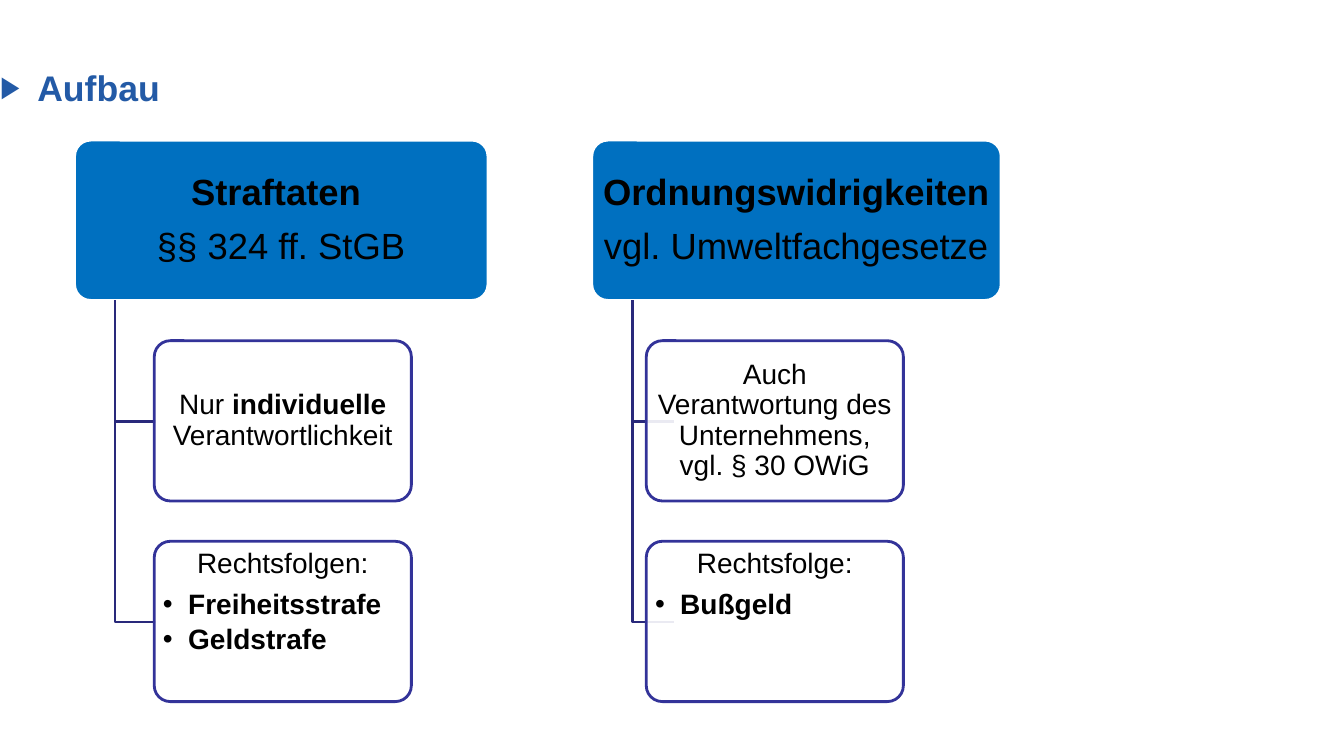
import pptx
import pptx.util
import pptx.dml.color
import pptx.enum.shapes
import pptx.enum.text
import pptx.oxml
import pptx.oxml.ns

PX = 9144
COLORS = {
    "heading": "235AA6",
    "header": "0070C0",
    "branch": "29297B",
    "outline": "333399",
    "paper": "FFFFFF",
    "ink": "000000",
}
CENTER = pptx.enum.text.PP_ALIGN.CENTER
LEFT = pptx.enum.text.PP_ALIGN.LEFT
TOP = pptx.enum.text.MSO_ANCHOR.TOP
MIDDLE = pptx.enum.text.MSO_ANCHOR.MIDDLE

HEADER_TOP = 139
BOX_HEIGHT = 159
BOX_WIDTH = 255
BOX_STEP = 199
BRANCH_INDENT = 40
BRANCH_LENGTH = 41

COLUMNS = [
    {
        "box": (74, 410),
        "item_left": 153,
        "header": [[("Straftaten ", True)], [("§§ 324 ff. StGB", False)]],
        "liability": [[("Nur ", False), ("individuelle", True),
                       (" Verantwortlichkeit", False)]],
        "consequence": "Rechtsfolgen:",
        "penalties": ["Freiheitsstrafe", "Geldstrafe"],
    },
    {
        "box": (587, 406),
        "item_left": 641,
        "header": [[("Ordnungswidrigkeiten", True)],
                   [("vgl. Umweltfachgesetze", False)]],
        "liability": [[("Auch Verantwortung des Unternehmens, vgl. § 30 OWiG",
                        False)]],
        "consequence": "Rechtsfolge:",
        "penalties": ["Bußgeld"],
    },
]


def px(length):
    return pptx.util.Emu(round(length * PX))


def rgb(name):
    return pptx.dml.color.RGBColor.from_string(COLORS[name])


def add_element(parent, tag, **attributes):
    element = pptx.oxml.parse_xml(
        f"<a:{tag} {pptx.oxml.ns.nsdecls('a')}/>")
    for key, value in attributes.items():
        element.set(key, value)
    parent.append(element)
    return element


def add_bullet(paragraph, symbol, indent, color=None, percent=None):
    properties = paragraph._p.get_or_add_pPr()
    properties.set("marL", str(px(indent)))
    properties.set("indent", str(px(-indent)))
    if color:
        add_element(add_element(properties, "buClr"), "srgbClr",
                    val=COLORS[color])
    if percent:
        add_element(properties, "buSzPct", val=str(percent * 1000))
    add_element(properties, "buFont", typeface="Arial")
    add_element(properties, "buChar", char=symbol)


def format_run(run, size, color, bold):
    run.font.name = "Arial"
    run.font.size = pptx.util.Pt(size)
    run.font.bold = bold
    run.font.color.rgb = rgb(color)


def add_paragraph(frame, index, runs, size, gap, align=CENTER, bullet=False):
    paragraph = frame.paragraphs[0] if index == 0 else frame.add_paragraph()
    if bullet:
        add_bullet(paragraph, "•", 25)
    paragraph.alignment = align
    paragraph.line_spacing = 0.9
    paragraph.space_after = pptx.util.Pt(gap)
    for text, bold in runs:
        run = paragraph.add_run()
        run.text = text
        format_run(run, size, "ink", bold)


def add_card(slide, left, top, width, fill, line, anchor, inset):
    card = slide.shapes.add_shape(
        pptx.enum.shapes.MSO_SHAPE.ROUNDED_RECTANGLE,
        px(left), px(top), px(width), px(BOX_HEIGHT))
    card.adjustments[0] = 0.1
    card.shadow.inherit = False
    card.fill.solid()
    card.fill.fore_color.rgb = rgb(fill)
    card.line.color.rgb = rgb(line)
    card.line.width = pptx.util.Pt(2)
    frame = card.text_frame
    frame.word_wrap = True
    frame.vertical_anchor = anchor
    frame.margin_left = frame.margin_right = px(inset)
    frame.margin_top = frame.margin_bottom = px(inset - 1)
    return card


def add_item(slide, left, top, anchor):
    item = add_card(slide, left, top, BOX_WIDTH, "paper", "outline", anchor, 4)
    color = item.fill._xPr.find(".//" + pptx.oxml.ns.qn("a:srgbClr"))
    add_element(color, "alpha", val="90000")
    return item.text_frame


def add_branch(slide, left, top, bottom):
    builder = slide.shapes.build_freeform(px(left), px(top))
    builder.add_line_segments(
        [(px(left), px(bottom)), (px(left + BRANCH_LENGTH), px(bottom))],
        close=False)
    branch = builder.convert_to_shape()
    branch.fill.background()
    branch.line.color.rgb = rgb("branch")
    branch.line.width = pptx.util.Pt(2)
    branch.shadow.inherit = False


def add_heading(slide, left, top, width, height):
    heading = slide.shapes.title
    heading.left, heading.top = px(left), px(top)
    heading.width, heading.height = px(width), px(height)
    frame = heading.text_frame
    frame.text = "Aufbau"
    frame.word_wrap = True
    frame.auto_size = pptx.enum.text.MSO_AUTO_SIZE.NONE
    frame.vertical_anchor = TOP
    frame.margin_left = frame.margin_right = 0
    frame.margin_top = frame.margin_bottom = 0
    paragraph = frame.paragraphs[0]
    add_bullet(paragraph, "▶", 37, "heading", 85)
    paragraph.alignment = LEFT
    paragraph.line_spacing = pptx.util.Pt(29)
    format_run(paragraph.runs[0], 25.4, "heading", True)


def add_column(slide, column):
    left, width = column["box"]
    header = add_card(slide, left, HEADER_TOP, width, "header", "paper",
                      MIDDLE, 5)
    for index, runs in enumerate(column["header"]):
        add_paragraph(header.text_frame, index, runs, 26,
                      10.5 if index == 0 else 0)

    item_tops = [HEADER_TOP + BOX_STEP * step for step in (1, 2)]
    for item_top in item_tops:
        add_branch(slide, left + BRANCH_INDENT, HEADER_TOP + BOX_HEIGHT,
                   item_top + BOX_HEIGHT // 2 + 1)

    liability = add_item(slide, column["item_left"], item_tops[0], MIDDLE)
    for index, runs in enumerate(column["liability"]):
        add_paragraph(liability, index, runs, 20, 0)

    consequence = add_item(slide, column["item_left"], item_tops[1], TOP)
    add_paragraph(consequence, 0, [(column["consequence"], False)], 20, 8)
    for index, penalty in enumerate(column["penalties"], 1):
        add_paragraph(consequence, index, [(penalty, True)], 20, 3.5,
                      LEFT, True)


def main():
    presentation = pptx.Presentation()
    presentation.slide_width = px(1333)
    presentation.slide_height = px(750)
    slide = presentation.slides.add_slide(presentation.slide_layouts[5])
    add_heading(slide, 0, 67, 940, 144)
    for column in COLUMNS:
        add_column(slide, column)
    presentation.save("out.pptx")


if __name__ == "__main__":
    main()
